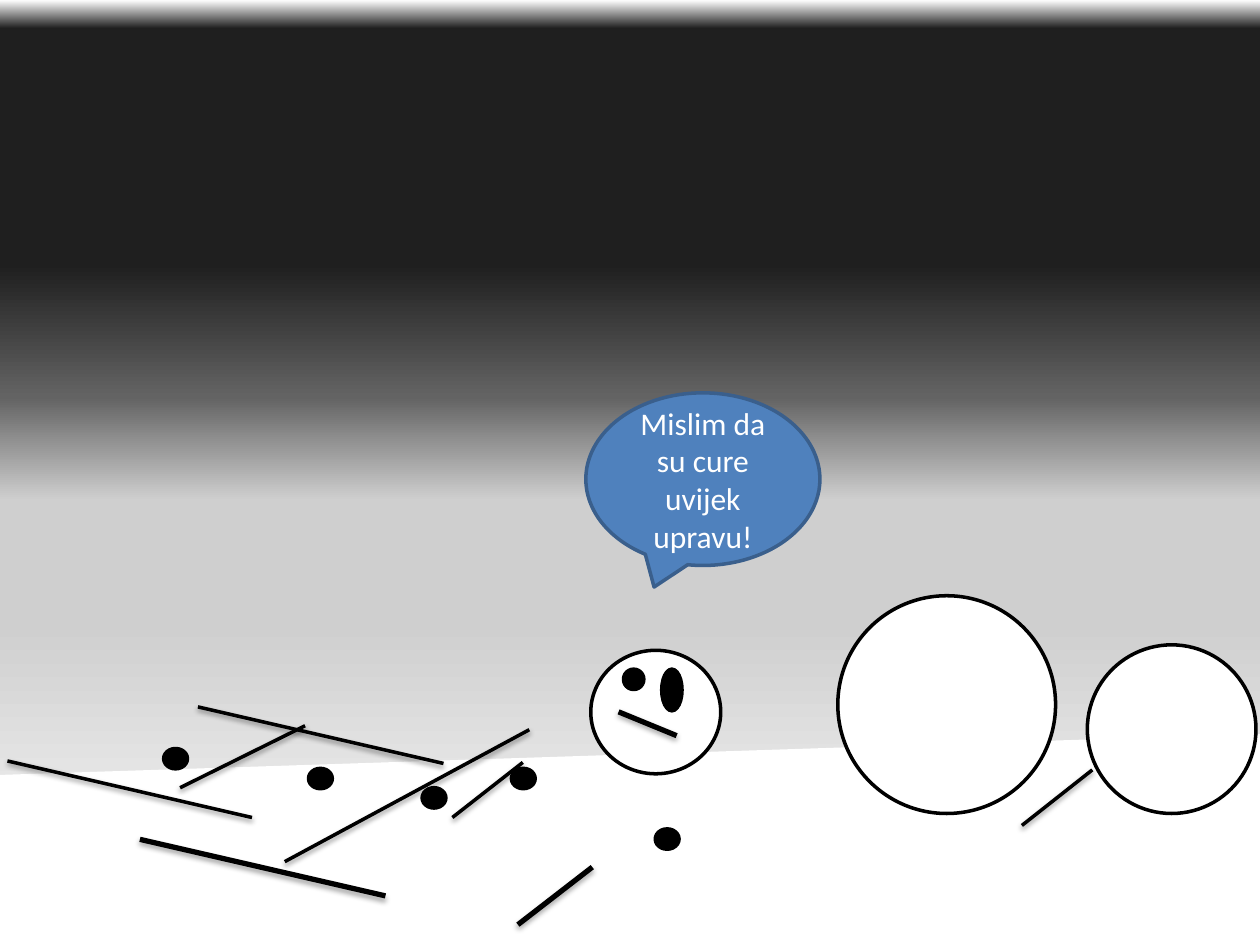
"""Build a slide of a melted snowman under a night sky, with a speech bubble."""
import pptx
import pptx.dml.color
import pptx.enum.shapes
import pptx.enum.text
import pptx.oxml
import pptx.oxml.ns
import pptx.util
from lxml import etree

Cm, Pt = pptx.util.Cm, pptx.util.Pt
Rgb = pptx.dml.color.RGBColor.from_string
Kind = pptx.enum.shapes.MSO_SHAPE
DRAW = pptx.oxml.ns.nsdecls("a")


class Theme:
    snow, coal = "FFFFFF", "000000"
    bubble, rim = "4F81BD", "3A5F8C"
    font, size = "Calibri", 18
    thin, thick = 2, 3
    sky = [(0, "FFFFFF"), (3, "1F1F1F"), (28, "1F1F1F"), (42, "636363"),
           (53, "CFCFCF"), (66, "CFCFCF"), (100, "FFFFFF")]
    shade = {2: (38, 1.6), 3: (35, 1.8)}


def shape(host, kind, box, fill, edge=Theme.coal):
    item = host.shapes.add_shape(kind, *map(Cm, box))
    item.shadow.inherit = False
    item.fill.solid()
    item.fill.fore_color.rgb = Rgb(fill)
    item.line.color.rgb = Rgb(edge)
    item.line.width = Pt(Theme.thin)
    return item


def stick(host, ends, width):
    line = host.shapes.add_connector(
        pptx.enum.shapes.MSO_CONNECTOR.STRAIGHT, *map(Cm, ends))
    line.line.color.rgb = Rgb(Theme.coal)
    line.line.width = Pt(width)
    alpha, dist = Theme.shade[width]
    line._element.spPr.append(pptx.oxml.parse_xml(
        f'<a:effectLst {DRAW}><a:outerShdw blurRad="{Pt(3.1)}" '
        f'dist="{Pt(dist)}" dir="5400000" rotWithShape="0">'
        f'<a:srgbClr val="{Theme.coal}"><a:alpha val="{alpha * 1000}"/>'
        '</a:srgbClr></a:outerShdw></a:effectLst>'))


deck = pptx.Presentation()
deck.slide_width, deck.slide_height = Cm(25.4), Cm(19.05)
slide = deck.slides.add_slide(deck.slide_layouts[6])

sky = slide.background.fill
sky.gradient()
sky.gradient_angle = 270
stops = sky.gradient_stops[0]._gs.getparent()
for stop in list(stops):
    stops.remove(stop)
for place, shade in Theme.sky:
    stop = etree.SubElement(stops, pptx.oxml.ns.qn("a:gs"), pos=str(place * 1000))
    etree.SubElement(stop, pptx.oxml.ns.qn("a:srgbClr"), val=shade)

shape(slide, Kind.FLOWCHART_MANUAL_INPUT, (0, 14.83, 25.4, 4.14),
      Theme.snow, Theme.snow)
for left, top, side in [(16.89, 12.01, 4.39), (21.92, 13, 3.4)]:
    shape(slide, Kind.OVAL, (left, top, side, side), Theme.snow)
for left, top in [(6.22, 15.49), (8.51, 15.88), (3.3, 15.09),
                  (10.31, 15.49), (13.21, 16.71)]:
    shape(slide, Kind.OVAL, (left, top, 0.48, 0.41), Theme.coal)

sticks = [
    (7.77, 18.06, 2.82, 16.92, Theme.thick),
    (10.44, 18.64, 11.94, 17.48, Theme.thick),
    (9.12, 16.48, 10.54, 15.37, Theme.thin),
    (3.63, 15.88, 6.15, 14.63, Theme.thin),
    (20.6, 16.64, 22.02, 15.52, Theme.thin),
    (8.94, 15.39, 3.99, 14.25, Theme.thin),
    (5.08, 16.48, 0.15, 15.34, Theme.thin),
    (10.67, 14.71, 5.74, 17.37, Theme.thin),
]
for *ends, width in sticks:
    stick(slide, ends, width)

head = slide.shapes.add_group_shape()
shape(head, Kind.OVAL, (11.91, 13.11, 2.62, 2.49), Theme.snow)
for left, tall in [(12.57, 0.41), (13.34, 0.84)]:
    shape(head, Kind.FLOWCHART_CONNECTOR, (left, 13.49, 0.41, tall), Theme.coal)
stick(head, (12.47, 14.35, 13.64, 14.83), Theme.thick)

bubble = shape(slide, Kind.OVAL_CALLOUT, (11.81, 7.92, 4.72, 3.48),
               Theme.bubble, Theme.rim)
frame = bubble.text_frame
frame.word_wrap = True
frame.vertical_anchor = pptx.enum.text.MSO_ANCHOR.MIDDLE
speech = frame.paragraphs[0]
speech.alignment = pptx.enum.text.PP_ALIGN.CENTER
run = speech.add_run()
run.text = "Mislim da su cure uvijek upravu!"
run.font.name = Theme.font
run.font.size = Pt(Theme.size)
run.font.color.rgb = Rgb(Theme.snow)

deck.save("out.pptx")
